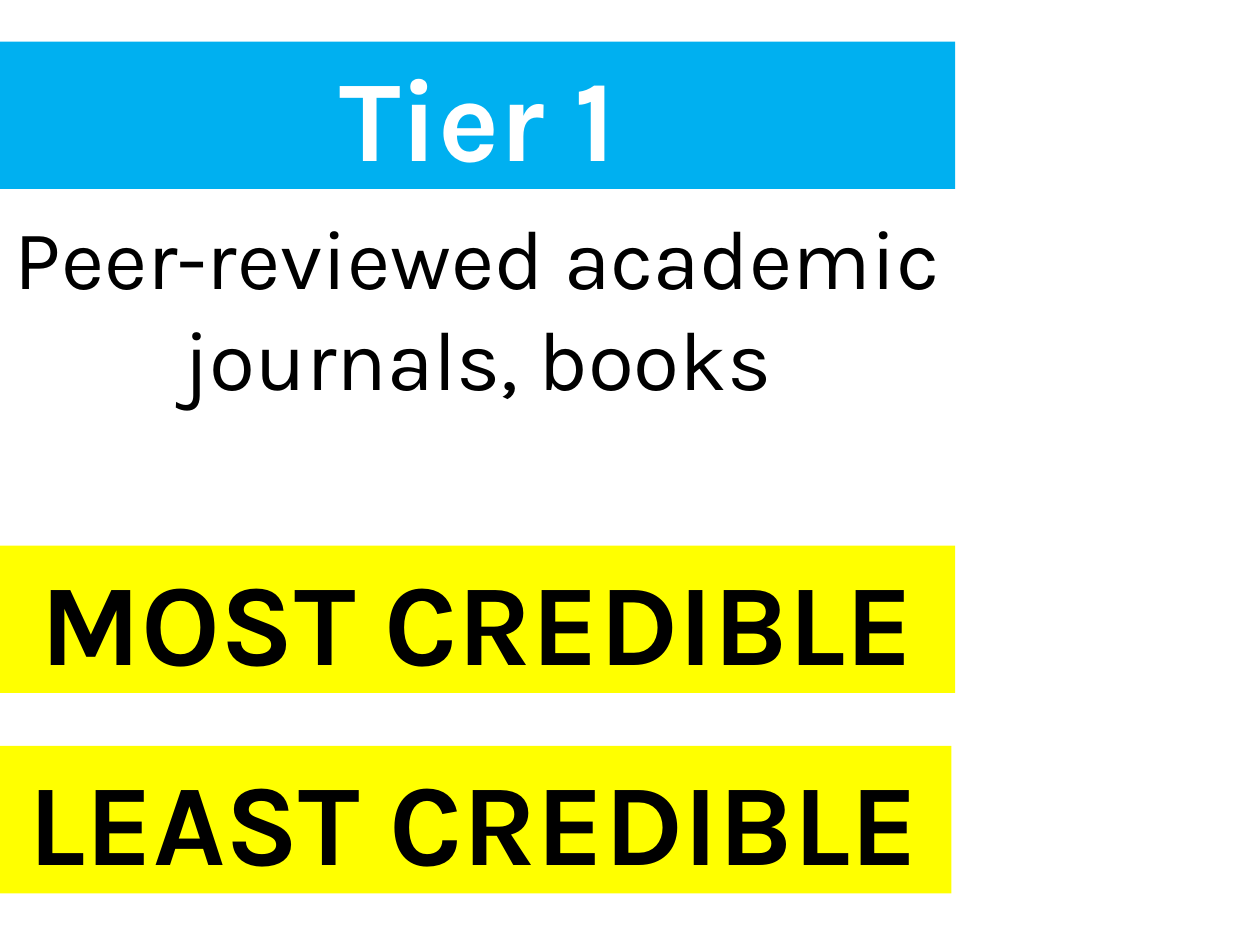
from dataclasses import dataclass

import pptx
import pptx.dml.color
import pptx.enum.shapes
import pptx.enum.text
import pptx.util

WIDTH, HEIGHT = 10, 7.5
COLUMN_WIDTH = 0.758 * WIDTH
BAND_HEIGHT = 1.17
FONT = "Karla"
COLORS = {"blue": "00B0F0", "yellow": "FFFF00", "white": "FFFFFF", "black": "000000"}


@dataclass
class Band:
    text: str
    top: float
    fill: str
    color: str
    left: float = 0


BANDS = [
    Band("Tier 1", 0.33, "blue", "white"),
    Band("MOST CREDIBLE", 4.33, "yellow", "black"),
    Band("LEAST CREDIBLE", 5.92, "yellow", "black", left=-0.03),
]


def rgb(name: str) -> pptx.dml.color.RGBColor:
    return pptx.dml.color.RGBColor.from_string(COLORS[name])


def write_text(shape, text: str, *, size: float, color: str, bold: bool = False,
               anchor=pptx.enum.text.MSO_ANCHOR.TOP) -> None:
    frame = shape.text_frame
    frame.word_wrap = True
    frame.vertical_anchor = anchor
    paragraph = frame.paragraphs[0]
    paragraph.alignment = pptx.enum.text.PP_ALIGN.CENTER
    run = paragraph.add_run()
    run.text = text
    run.font.name = FONT
    run.font.size = pptx.util.Pt(size)
    run.font.bold = bold
    run.font.color.rgb = rgb(color)


def box(left: float, top: float, height: float) -> list[pptx.util.Length]:
    """Left, top, width and height of a box as wide as the text column."""
    return [pptx.util.Inches(value) for value in (left, top, COLUMN_WIDTH, height)]


def draw_band(slide, band: Band) -> None:
    shape = slide.shapes.add_shape(
        pptx.enum.shapes.MSO_SHAPE.RECTANGLE, *box(band.left, band.top, BAND_HEIGHT))
    shape.shadow.inherit = False
    shape.fill.solid()
    shape.fill.fore_color.rgb = rgb(band.fill)
    shape.line.fill.background()
    write_text(shape, band.text, size=66, color=band.color, bold=True,
               anchor=pptx.enum.text.MSO_ANCHOR.MIDDLE)


def draw_description(slide, text: str) -> None:
    shape = slide.shapes.add_textbox(*box(0, 1.58, 1.72))
    write_text(shape, text, size=48, color="black")
    shape.text_frame.auto_size = pptx.enum.text.MSO_AUTO_SIZE.SHAPE_TO_FIT_TEXT


def main() -> None:
    presentation = pptx.Presentation()
    presentation.slide_width = pptx.util.Inches(WIDTH)
    presentation.slide_height = pptx.util.Inches(HEIGHT)
    slide = presentation.slides.add_slide(presentation.slide_layouts[6])
    for band in BANDS:
        draw_band(slide, band)
    draw_description(slide, "Peer-reviewed academic journals, books")
    presentation.save("out.pptx")


if __name__ == "__main__":
    main()
